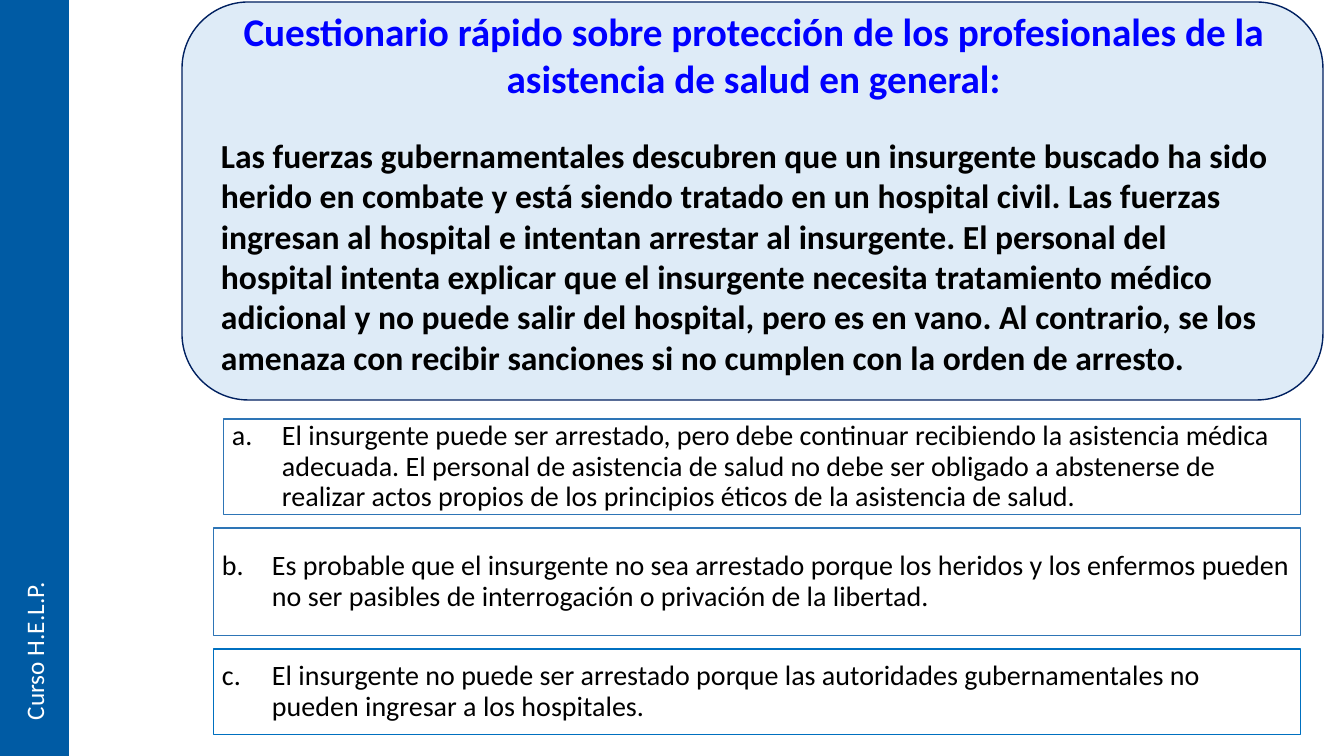
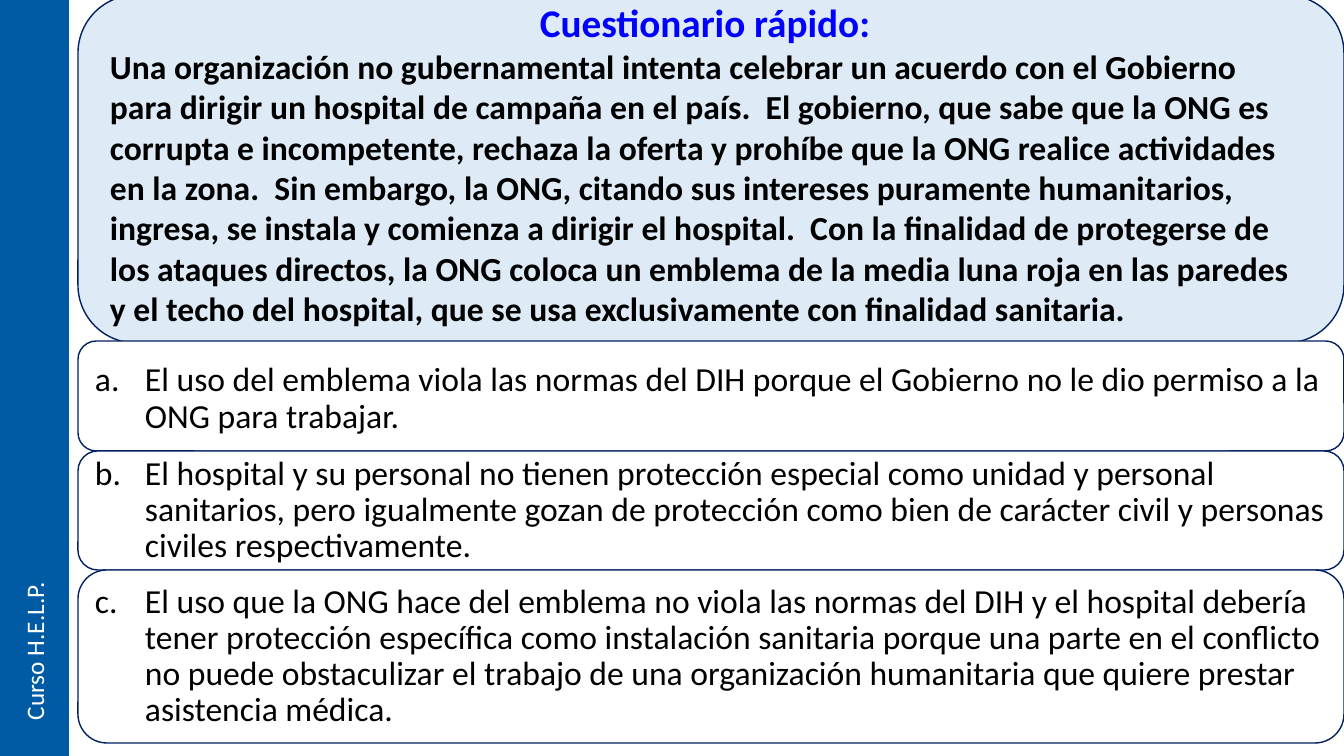
from lxml.etree import SubElement as Sub
from pptx import Presentation
from pptx.dml.color import RGBColor as Rgb
from pptx.enum.shapes import MSO_SHAPE as Geo
from pptx.enum.text import MSO_ANCHOR as Anchor, MSO_AUTO_SIZE as Fit, PP_ALIGN as Align
from pptx.oxml.ns import qn
from pptx.util import Emu, Pt

WIDE, HIGH = 1344, 756
SCALE = 12192000 / WIDE
FONT = "Calibri"
HUES = {
    "band": "005BA4",
    "panel": "DEEBF7",
    "navy": "002060",
    "title": "0000FF",
    "steel": "2E75B6",
    "azure": "0070C0",
    "white": "FFFFFF",
    "black": "000000",
}


def px(num):
    return Emu(round(num * SCALE))


def hue(name):
    return Rgb.from_string(HUES[name])


def put(frame, text, size=24, color="black", bold=False, align=Align.LEFT,
        anchor=Anchor.MIDDLE, pad=(0, 0), wrap=True, space=None, item=None):
    frame.auto_size = Fit.NONE
    frame.word_wrap = wrap
    frame.vertical_anchor = anchor
    frame.margin_left = frame.margin_right = px(pad[0])
    frame.margin_top = frame.margin_bottom = px(pad[1])
    para = frame.paragraphs[0]
    para.alignment = align
    if space:
        para.line_spacing = space
    if item:
        props = para._p.get_or_add_pPr()
        props.set("marL", str(px(50)))
        props.set("indent", str(px(-50)))
        Sub(props, qn("a:buAutoNum"), type="alphaLcPeriod", startAt=str(item))
    run = para.add_run()
    run.text = text
    font = run.font
    font.name, font.size, font.bold = FONT, Pt(size), bold
    font.color.rgb = hue(color)


class Deck:
    def __init__(self):
        self.show = Presentation()
        self.show.slide_width, self.show.slide_height = px(WIDE), px(HIGH)
        self.slide = None

    def page(self):
        self.slide = self.show.slides.add_slide(self.show.slide_layouts[5])
        self.shape(Geo.RECTANGLE, (0, 0, 69, HIGH), "band")
        label = self.box((9, 566, 50, 159))
        put(label.text_frame, "Curso H.E.L.P.", size=18, color="white",
            anchor=Anchor.TOP, pad=(10, 5), wrap=False)
        label.element.txBody.bodyPr.set("vert", "vert270")

    def shape(self, kind, area, fill, line=None, width=1):
        form = self.slide.shapes.add_shape(kind, *map(px, area))
        form.shadow.inherit = False
        form.fill.solid()
        form.fill.fore_color.rgb = hue(fill)
        if line:
            form.line.color.rgb = hue(line)
            form.line.width = Pt(width)
        else:
            form.line.fill.background()
        return form

    def box(self, area):
        return self.slide.shapes.add_textbox(*map(px, area))

    def card(self, area, fill="white"):
        return self.shape(Geo.ROUNDED_RECTANGLE, area, fill, "navy")

    def title(self, text, area, card):
        head = self.slide.shapes.title
        head.left, head.top, head.width, head.height = map(px, area)
        put(head.text_frame, text, size=28, color="title", bold=True,
            align=Align.CENTER, pad=(12, 0))
        card.element.addnext(head.element)

    def case(self, area, head, split, body, text):
        left, top, width, high = head
        card = self.card(area, "panel")
        self.title(text, head, card)
        put(self.box((left, split[0], width, split[1])).text_frame, body,
            bold=True, pad=(12, 0))

    def answer(self, form, text, item, size):
        put(form.text_frame, text, size=size, pad=(8, 0), space=0.9, item=item)

    def save(self):
        self.show.save("out.pptx")


def arrest(deck):
    deck.page()
    deck.case(
        (182, 2, 1141, 398), (209, 7, 1089, 95), (135, 242),
        "Las fuerzas gubernamentales descubren que un insurgente buscado ha sido herido en combate y está siendo tratado en un hospital civil. Las fuerzas ingresan al hospital e intentan arrestar al insurgente. El personal del hospital intenta explicar que el insurgente necesita tratamiento médico adicional y no puede salir del hospital, pero es en vano. Al contrario, se los amenaza con recibir sanciones si no cumplen con la orden de arresto.",
        "Cuestionario rápido sobre protección de los profesionales de la asistencia de salud en general:")
    rows = [
        (224, 419, 96, "steel", "El insurgente puede ser arrestado, pero debe continuar recibiendo la asistencia médica adecuada. El personal de asistencia de salud no debe ser obligado a abstenerse de realizar actos propios de los principios éticos de la asistencia de salud."),
        (214, 528, 108, "steel", "Es probable que el insurgente no sea arrestado porque los heridos y los enfermos pueden no ser pasibles de interrogación o privación de la libertad."),
        (214, 649, 86, "azure", "El insurgente no puede ser arrestado porque las autoridades gubernamentales no pueden ingresar a los hospitales."),
    ]
    for item, (left, top, high, line, text) in enumerate(rows, 1):
        form = deck.shape(Geo.RECTANGLE, (left, top, 1301 - left, high),
                          "white", line, 0.75)
        deck.answer(form, text, item, 20)


def emblem(deck):
    deck.page()
    deck.case(
        (78, -5, 1266, 348), (98, -2, 1214, 48), (46, 282),
        "Una organización no gubernamental intenta celebrar un acuerdo con el Gobierno para dirigir un hospital de campaña en el país.  El gobierno, que sabe que la ONG es corrupta e incompetente, rechaza la oferta y prohíbe que la ONG realice actividades en la zona.  Sin embargo, la ONG, citando sus intereses puramente humanitarios, ingresa, se instala y comienza a dirigir el hospital.  Con la finalidad de protegerse de los ataques directos, la ONG coloca un emblema de la media luna roja en las paredes y el techo del hospital, que se usa exclusivamente con finalidad sanitaria.",
        "Cuestionario rápido:")
    rows = [
        (341, 110, 3, "El uso del emblema viola las normas del DIH porque el Gobierno no le dio permiso a la ONG para trabajar."),
        (451, 119, 0, "El hospital y su personal no tienen protección especial como unidad y personal sanitarios, pero igualmente gozan de protección como bien de carácter civil y personas civiles respectivamente."),
        (570, 173, 0, "El uso que la ONG hace del emblema no viola las normas del DIH y el hospital debería tener protección específica como instalación sanitaria porque una parte en el conflicto no puede obstaculizar el trabajo de una organización humanitaria que quiere prestar asistencia médica."),
    ]
    for item, (top, high, drop, text) in enumerate(rows, 1):
        deck.card((78, top, 1266, high))
        deck.answer(deck.box((87, top + drop, 1250, high)), text, item, 24)


def main():
    deck = Deck()
    arrest(deck)
    emblem(deck)
    deck.save()


if __name__ == "__main__":
    main()
